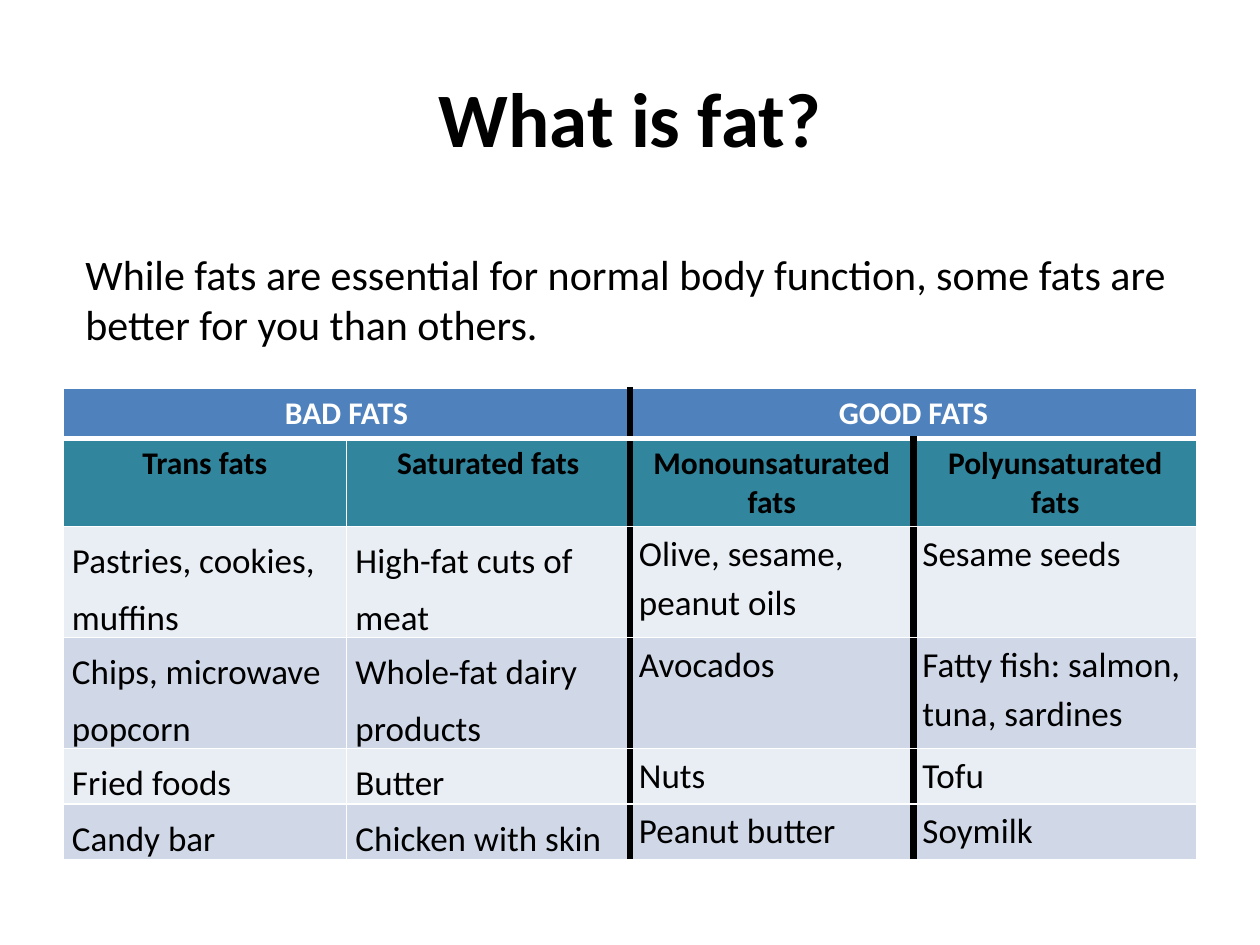
"""Build the "What is fat?" slide with a table of bad and good fats."""
from dataclasses import dataclass

from lxml.etree import SubElement
from pptx import Presentation
from pptx.dml.color import RGBColor
from pptx.enum.text import PP_ALIGN
from pptx.oxml.ns import qn
from pptx.util import Emu, Pt


@dataclass(frozen=True)
class Theme:
    font: str = "Calibri"
    black: str = "000000"
    white: str = "FFFFFF"
    group: str = "4F81BD"
    kind: str = "31859C"
    bands: tuple = ("E9EDF4", "D0D8E8")
    title: int = 44
    intro: int = 24
    head: int = 18
    food: int = 20


def px(n):
    return Emu(round(n * 914400 / 126))


def style(p, size, color, bold=False):
    p.font.name = T.font
    p.font.size = Pt(size)
    p.font.bold = bold
    p.font.color.rgb = RGBColor.from_string(color)


T = Theme()
ROWS = [
    ["BAD FATS", "", "GOOD FATS", ""],
    ["Trans fats", "Saturated fats", "Monounsaturated fats", "Polyunsaturated fats"],
    ["Pastries, cookies, muffins", "High-fat cuts of meat", "Olive, sesame, peanut oils", "Sesame seeds"],
    ["Chips, microwave popcorn", "Whole-fat dairy products", "Avocados", "Fatty fish: salmon, tuna, sardines"],
    ["Fried foods", "Butter", "Nuts", "Tofu"],
    ["Candy bar", "Chicken with skin", "Peanut butter", "Soymilk"],
]
HEIGHTS = [49, 84, 106, 106, 53, 53]

prs = Presentation()
prs.slide_width, prs.slide_height = px(1260), px(945)
s = prs.slides.add_slide(prs.slide_layouts[5])

title = s.shapes.title
title.left, title.top, title.width, title.height = px(63), px(38), px(1134), px(158)
title.text_frame.text = "What is fat?"
style(title.text_frame.paragraphs[0], T.title, T.black, True)

tf = s.shapes.add_textbox(px(73), px(242), px(1113), px(115)).text_frame
tf.word_wrap = True
tf.text = "While fats are essential for normal body function, some fats are better for you than others."
style(tf.paragraphs[0], T.intro, T.black)

tbl = s.shapes.add_table(len(ROWS), 4, px(63), px(388), px(1134), px(sum(HEIGHTS))).table
for row, height in zip(tbl.rows, HEIGHTS):
    row.height = px(height)
for left in (0, 2):
    tbl.cell(0, left).merge(tbl.cell(0, left + 1))

for r, row in enumerate(ROWS):
    for c, text in enumerate(row):
        cell = tbl.cell(r, c)
        if cell.is_spanned:
            continue
        end = c + (2 if r == 0 else 1)
        dividers = (2,) if r == 0 else (2, 3)
        edges = {
            "a:lnL": (T.black, 4.5) if c in dividers else (T.white, 1),
            "a:lnR": (T.black, 4.5) if end in dividers else (T.white, 1),
            "a:lnT": (T.white, 3 if r == 1 else 1),
            "a:lnB": (T.white, 3 if r == 0 else 1),
        }
        tcPr = cell._tc.get_or_add_tcPr()
        for tag, (color, width) in edges.items():
            ln = SubElement(tcPr, qn(tag), w=str(Pt(width)))
            SubElement(SubElement(ln, qn("a:solidFill")), qn("a:srgbClr"), val=color)
        cell.fill.solid()
        fill = (T.group, T.kind)[r] if r < 2 else T.bands[r % 2]
        cell.fill.fore_color.rgb = RGBColor.from_string(fill)
        cell.text = text
        p = cell.text_frame.paragraphs[0]
        if r < 2:
            p.alignment = PP_ALIGN.CENTER
            style(p, T.head, T.black if r else T.white, True)
        else:
            cell.margin_left = cell.margin_right = px(9)
            cell.margin_top = cell.margin_bottom = 0
            p.line_spacing = 1.32 if c < 2 else 1.15
            p.space_after = Pt(6)
            style(p, T.food, T.black)

prs.save("out.pptx")
